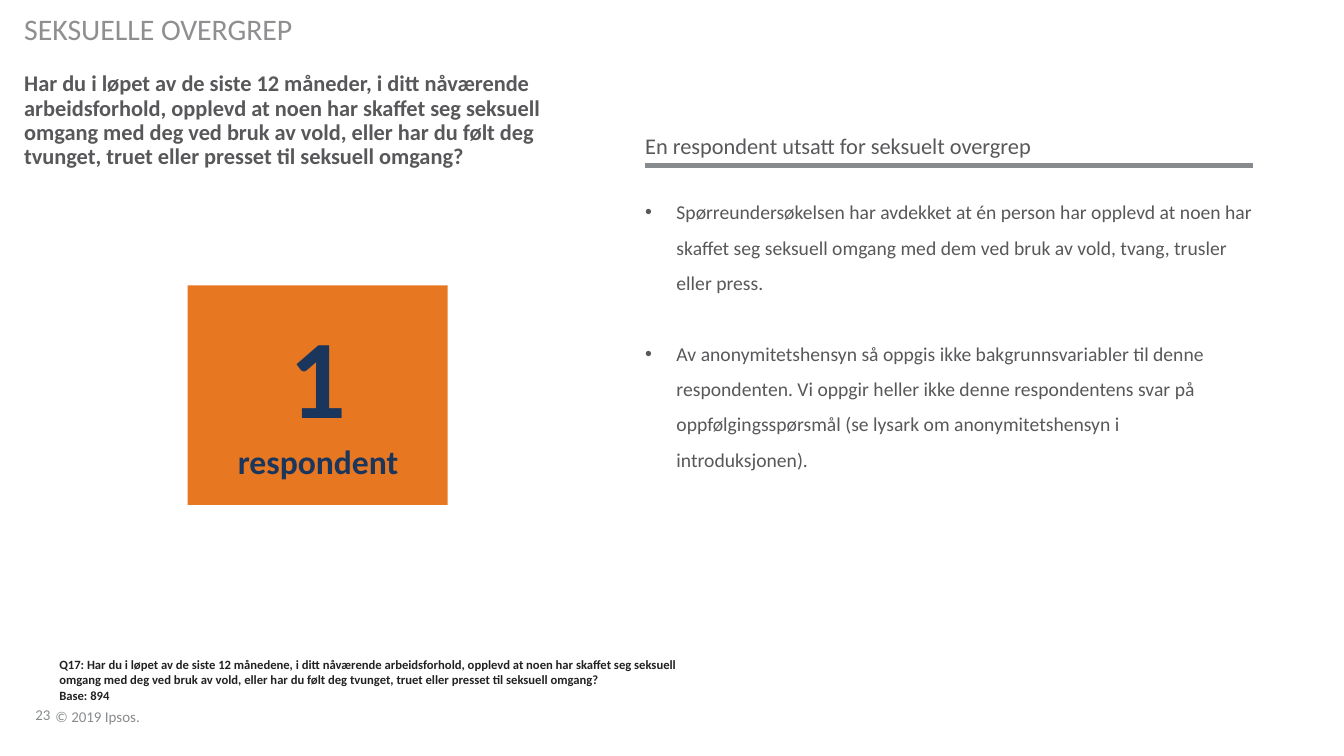
"""Build the survey slide about one respondent exposed to sexual assault."""
from dataclasses import dataclass

from lxml import etree
from pptx import Presentation
from pptx.dml.color import RGBColor
from pptx.enum.shapes import MSO_CONNECTOR, MSO_SHAPE
from pptx.enum.text import MSO_ANCHOR, PP_ALIGN
from pptx.oxml.ns import qn
from pptx.slide import Slide
from pptx.util import Inches, Pt

TOP, MIDDLE, BOTTOM = MSO_ANCHOR.TOP, MSO_ANCHOR.MIDDLE, MSO_ANCHOR.BOTTOM
LEFT, CENTER = PP_ALIGN.LEFT, PP_ALIGN.CENTER
RECTANGLE = MSO_SHAPE.RECTANGLE
STRAIGHT = MSO_CONNECTOR.STRAIGHT

FONT = "Calibri"
COLORS = {
    "orange": "E87722",
    "navy": "1B365D",
    "rule": "888B8D",
    "heading": "8F8F92",
    "body": "58585B",
    "note": "222223",
}
COLUMN_LEFT, COLUMN_WIDTH = 6.4, 6.03
BULLET_INDENT = 0.31


@dataclass(frozen=True)
class Line:
    text: str
    size: float


@dataclass(frozen=True)
class Block:
    box: tuple[float, float, float, float]
    lines: tuple[Line, ...]
    color: str
    bold: bool = False
    align: PP_ALIGN = LEFT
    anchor: MSO_ANCHOR = TOP
    spacing: float = 1.0
    gap: float = 0
    bulleted: bool = False
    insets: tuple[float, float] = (0, 0)


BLOCKS = (
    Block((0.35, 6.83, 0.45, 0.35), (Line("23", 10.7),), "rule",
          anchor=BOTTOM, spacing=0.85),
    Block((0.55, 6.95, 1.01, 0.25), (Line("© 2019 Ipsos.", 10.7),), "rule",
          anchor=BOTTOM, spacing=0.85),
    Block((0.24, 0.07, 9.81, 0.47), (Line("SEKSUELLE OVERGREP", 21.3),), "heading",
          anchor=MIDDLE, spacing=0.9),
    Block((0.24, 0.72, 5.87, 0.97), (
        Line("Har du i løpet av de siste 12 måneder, i ditt nåværende arbeidsforhold, "
             "opplevd at noen har skaffet seg seksuell omgang med deg ved bruk av vold, "
             "eller har du følt deg tvunget, truet eller presset til seksuell omgang?", 16),
    ), "body", bold=True, spacing=0.9),
    Block((0.49, 6.47, 6.67, 0.56), (
        Line("Q17: Har du i løpet av de siste 12 månedene, i ditt nåværende arbeidsforhold, "
             "opplevd at noen har skaffet seg seksuell omgang med deg ved bruk av vold, "
             "eller har du følt deg tvunget, truet eller presset til seksuell omgang?", 9),
        Line("Base: 894", 9),
    ), "note", bold=True, insets=(0.1, 0.05)),
    Block((COLUMN_LEFT, 1.87, COLUMN_WIDTH, 4.32), (
        Line("Spørreundersøkelsen har avdekket at én person har opplevd at noen har "
             "skaffet seg seksuell omgang med dem ved bruk av vold, tvang, trusler "
             "eller press.", 14),
        Line("Av anonymitetshensyn så oppgis ikke bakgrunnsvariabler til denne "
             "respondenten. Vi oppgir heller ikke denne respondentens svar på "
             "oppfølgingsspørsmål (se lysark om anonymitetshensyn i introduksjonen).", 14),
    ), "body", spacing=1.5, gap=25.4, bulleted=True),
    Block((COLUMN_LEFT, 1.31, COLUMN_WIDTH, 0.37),
          (Line("En respondent utsatt for seksuelt overgrep", 16),), "body"),
    Block((2.27, 3.04, 1.77, 1.75), (Line("1", 80), Line("respondent", 24)), "navy",
          bold=True, align=CENTER),
)


def rgb(name: str) -> RGBColor:
    return RGBColor.from_string(COLORS[name])


def add_block(slide: Slide, block: Block) -> None:
    frame = slide.shapes.add_textbox(*map(Inches, block.box)).text_frame
    frame.word_wrap = True
    frame.vertical_anchor = block.anchor
    frame.margin_left = frame.margin_right = Inches(block.insets[0])
    frame.margin_top = frame.margin_bottom = Inches(block.insets[1])
    for index, line in enumerate(block.lines):
        paragraph = frame.add_paragraph() if index else frame.paragraphs[0]
        paragraph.alignment = block.align
        paragraph.line_spacing = block.spacing
        paragraph.space_before = Pt(block.gap if index else 0)
        if block.bulleted:
            properties = paragraph._p.get_or_add_pPr()
            properties.set("marL", str(Inches(BULLET_INDENT)))
            properties.set("indent", str(-Inches(BULLET_INDENT)))
            etree.SubElement(properties, qn("a:buFont"), typeface="Arial")
            etree.SubElement(properties, qn("a:buChar"), char="•")
        run = paragraph.add_run()
        run.text = line.text
        run.font.name = FONT
        run.font.size = Pt(line.size)
        run.font.bold = block.bold
        run.font.color.rgb = rgb(block.color)


def add_count_panel(slide: Slide) -> None:
    panel = slide.shapes.add_shape(RECTANGLE, *map(Inches, (1.86, 2.83, 2.58, 2.18)))
    panel.shadow.inherit = False
    panel.fill.solid()
    panel.fill.fore_color.rgb = rgb("orange")
    panel.line.fill.background()


def add_heading_rule(slide: Slide) -> None:
    ends = (COLUMN_LEFT, 1.64, COLUMN_LEFT + COLUMN_WIDTH, 1.64)
    rule = slide.shapes.add_connector(STRAIGHT, *map(Inches, ends))
    rule.line.color.rgb = rgb("rule")
    rule.line.width = Pt(3.5)
    etree.SubElement(rule._element.spPr, qn("a:effectLst"))


def main() -> None:
    presentation = Presentation()
    presentation.slide_width = Inches(13.33)
    presentation.slide_height = Inches(7.5)
    slide = presentation.slides.add_slide(presentation.slide_layouts[6])
    add_count_panel(slide)
    add_heading_rule(slide)
    for block in BLOCKS:
        add_block(slide, block)
    presentation.save("out.pptx")


if __name__ == "__main__":
    main()
